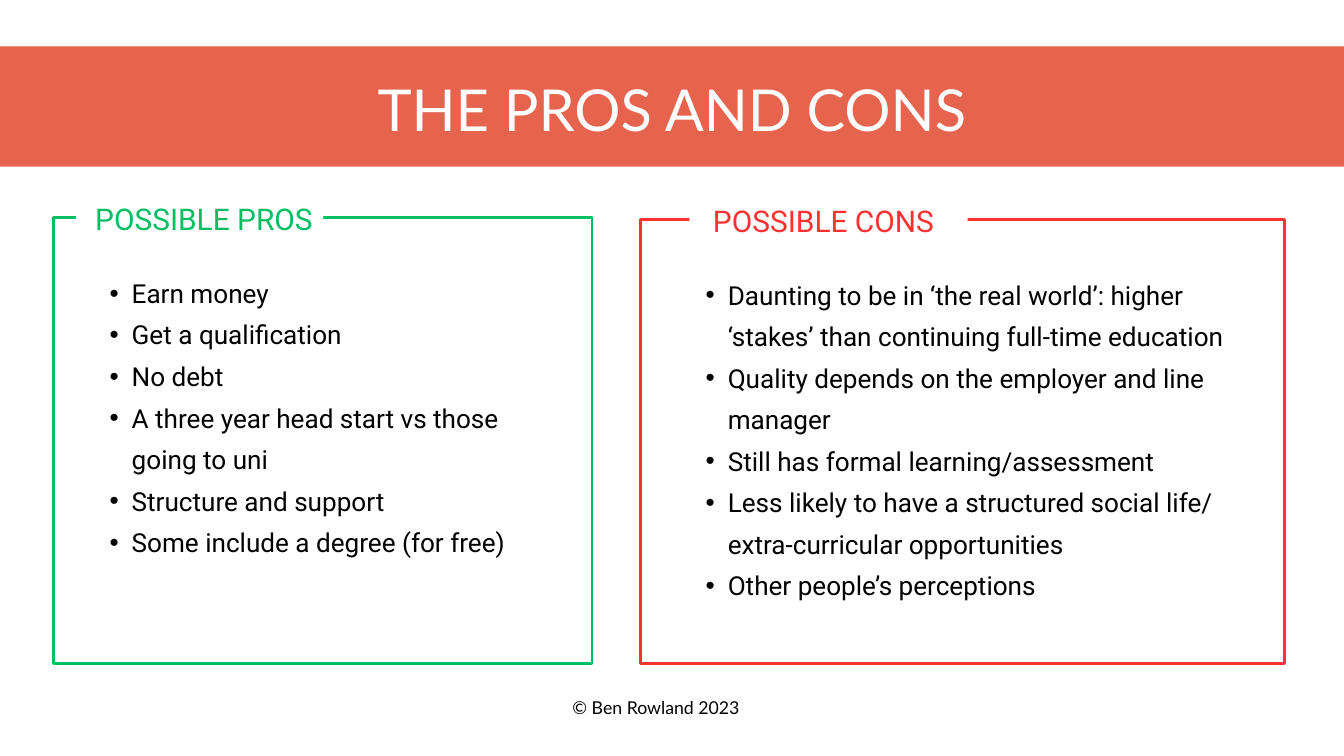
from lxml.etree import SubElement
from pptx import Presentation
from pptx.dml.color import RGBColor
from pptx.enum.shapes import MSO_SHAPE as Shape
from pptx.enum.text import MSO_ANCHOR as Anchor, PP_ALIGN as Align
from pptx.oxml.ns import qn
from pptx.util import Cm, Pt

CORAL, GREEN, RED = "E6634D", "00BF63", "FF3131"
WHITE, BLACK = "FFFFFF", "000000"
PAGE_WIDTH, PAGE_HEIGHT = 50.8, 28.58

PROS = [
    "Earn money",
    "Get a qualification",
    "No debt",
    "A three year head start vs those going to uni",
    "Structure and support",
    "Some include a degree (for free)",
]
CONS = [
    "Daunting to be in ‘the real world’: higher ‘stakes’ than continuing full-time education",
    "Quality depends on the employer and line manager",
    "Still has formal learning/assessment",
    "Less likely to have a structured social life/ extra-curricular opportunities",
    "Other people’s perceptions",
]


def color(hex_string):
    return RGBColor.from_string(hex_string)


def lengths(box):
    return [Cm(value) for value in box]


def add_rectangle(page, box, fill=None, line=None):
    shape = page.shapes.add_shape(Shape.RECTANGLE, *lengths(box))
    shape.shadow.inherit = False
    if fill:
        shape.fill.solid()
        shape.fill.fore_color.rgb = color(fill)
    else:
        shape.fill.background()
    if line:
        shape.line.color.rgb = color(line)
        shape.line.width = Pt(3)
    else:
        shape.line.fill.background()
    return shape


def add_bullet(para, indent=1.68, hanging=0.84):
    properties = para._p.get_or_add_pPr()
    properties.set("marL", str(Cm(indent)))
    properties.set("indent", str(-Cm(hanging)))
    SubElement(properties, qn("a:buFont"), typeface="Arial")
    SubElement(properties, qn("a:buChar"), char="•")


def write(shape, lines, font="Roboto", size=28, ink=BLACK, spacing=44.5,
          align=Align.LEFT, bullets=False):
    frame = shape.text_frame
    frame.word_wrap = True
    frame.vertical_anchor = Anchor.TOP
    frame.margin_left = frame.margin_right = 0
    frame.margin_top = frame.margin_bottom = 0
    for index, line in enumerate(lines):
        para = frame.add_paragraph() if index else frame.paragraphs[0]
        para.alignment = align
        para.line_spacing = Pt(spacing)
        span = para.add_run()
        span.text = line
        span.font.name = font
        span.font.size = Pt(size)
        span.font.color.rgb = color(ink)
        if bullets:
            add_bullet(para)


def add_text(page, box, lines, **format):
    write(page.shapes.add_textbox(*lengths(box)), lines, **format)


def add_banner(page, box, text):
    left, top, width, height = box
    band = add_rectangle(page, box, fill=CORAL)
    title = page.shapes.title
    title.element.addprevious(band.element)  # keeps the title in front
    title.left, title.top, title.width, title.height = lengths(
        (left + 9.1, top + 1.27, width - 18.2, 2.44))
    write(title, [text], font="Lato", size=61.9, ink=WHITE, spacing=68,
          align=Align.CENTER)


def add_panel(page, box, heading, items, ink, gap, heading_inset, list_inset):
    """Frame whose top edge is broken by a heading; gap is (inset, width)."""
    left, top, width, height = box
    gap_inset, gap_width = gap
    add_rectangle(page, box, line=ink)
    add_rectangle(page, (left + gap_inset, top - 0.65, gap_width, 1.42), fill=WHITE)
    add_text(page, (left + heading_inset, top - 0.53, gap_width, 1.3),
             [heading], size=32, ink=ink, spacing=35.2)
    add_text(page, (left + list_inset, top + 1.87, width - 2.6, height - 2.5),
             items, bullets=True)


def main():
    deck = Presentation()
    deck.slide_width, deck.slide_height = Cm(PAGE_WIDTH), Cm(PAGE_HEIGHT)
    page = deck.slides.add_slide(deck.slide_layouts[5])

    add_banner(page, (0, 1.75, PAGE_WIDTH, 4.55), "THE PROS AND CONS")
    add_panel(page, (2.03, 8.23, 20.35, 16.84), "POSSIBLE PROS", PROS, GREEN,
              gap=(0.84, 9.35), heading_inset=1.57, list_inset=1.27)
    add_panel(page, (24.2, 8.3, 24.35, 16.77), "POSSIBLE CONS", CONS, RED,
              gap=(1.86, 10.52), heading_inset=2.75, list_inset=1.63)
    add_text(page, (21.62, 26.21, 6.35, 0.89), ["© Ben Rowland 2023"],
             font="Lato", size=19, spacing=26.6, align=Align.CENTER)

    deck.save("out.pptx")


if __name__ == "__main__":
    main()
